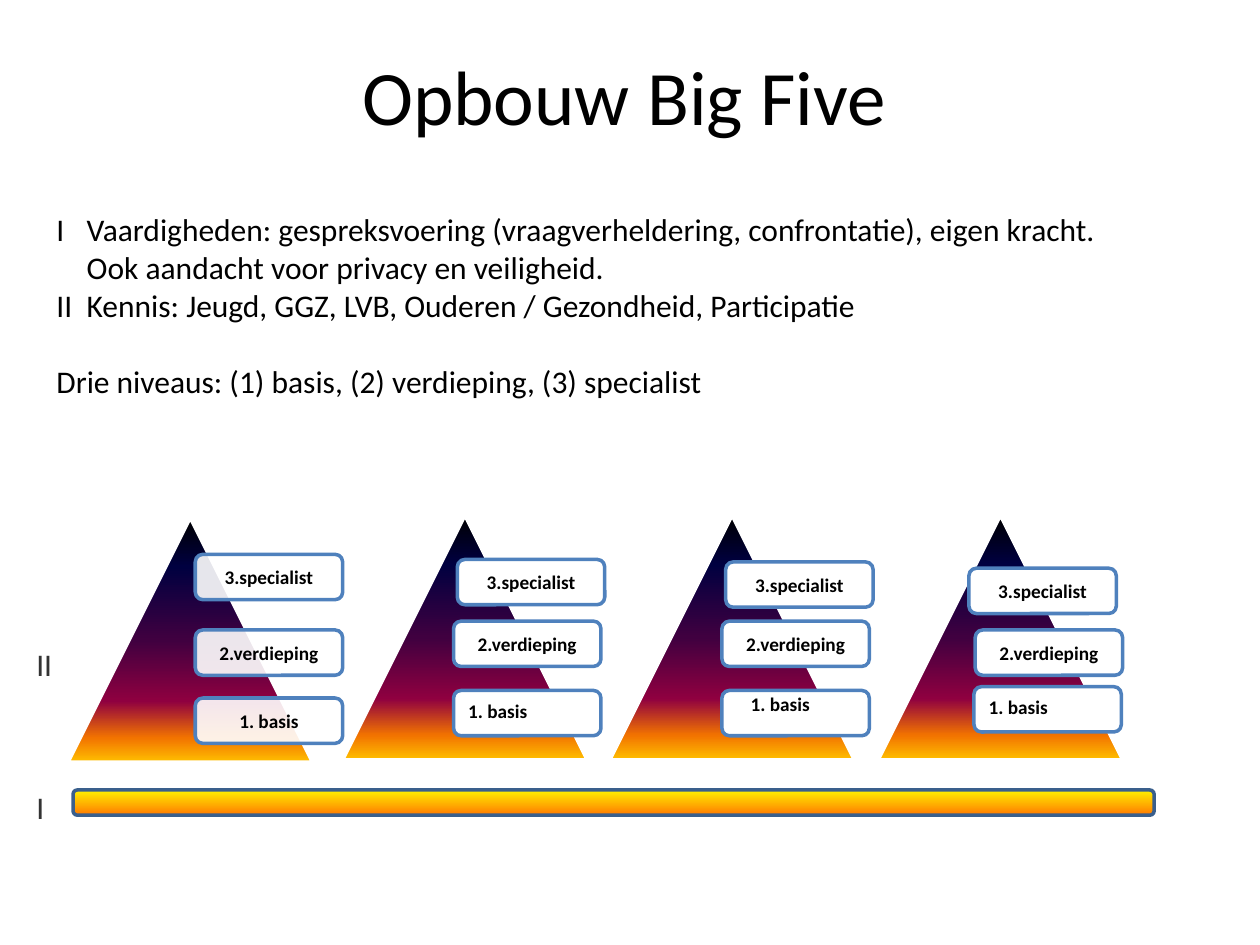
from lxml import etree
from pptx import Presentation
from pptx.dml.color import RGBColor
from pptx.enum import shapes, text
from pptx.oxml import ns
from pptx.util import Inches, Pt

FONT = "Calibri"
COLORS = {"ink": "000000", "level": "333333", "white": "FFFFFF",
          "card_line": "4F81BD", "bar_line": "3A5F8C"}
PYRAMID_STOPS = [(0, "000000"), (20, "000040"), (50, "400040"),
                 (75, "8F0040"), (90, "F27300"), (100, "FFBF00")]
BAR_STOPS = [(0, "FFF200"), (100, "FF7A00")]

# Pyramid left and top, then the left and top of its cards, top card first
PYRAMIDS = [
    (0.54, 4.11, [(1.55, 4.4), (1.55, 5), (1.55, 5.54)]),
    (2.72, 4.09, [(3.63, 4.44), (3.6, 4.93), (3.6, 5.48)]),
    (4.84, 4.09, [(5.76, 4.46), (5.73, 4.93), (5.73, 5.48)]),
    (6.97, 4.09, [(7.69, 4.51), (7.74, 5), (7.73, 5.45)]),
]
LEVELS = ["3.specialist", "2.verdieping", "1. basis"]
# Left and top inset of the basis label; None centres it
BASIS_INSETS = [None, (0.1, 0.05), (0.21, 0), (0.1, 0.05)]


def rgb(name):
    return RGBColor.from_string(COLORS[name])


def style(paragraph, size, color="ink", bold=False):
    font = paragraph.font
    font.name, font.size, font.bold = FONT, Pt(size), bold
    font.color.rgb = rgb(color)


def add_text(slide, box, lines, size, color="ink"):
    frame = slide.shapes.add_textbox(*map(Inches, box)).text_frame
    frame.word_wrap = True
    frame.text = "\n".join(lines)
    for paragraph in frame.paragraphs:
        style(paragraph, size, color)
    return frame


def add_outlined(slide, kind, box, line):
    shape = slide.shapes.add_shape(kind, *map(Inches, box))
    shape.shadow.inherit = False
    shape.line.color.rgb = rgb(line)
    shape.line.width = Pt(2)
    return shape


def fill_gradient(shape, stops):
    """Fill from top to bottom with (percent, colour) stops."""
    shape.fill.gradient()
    shape.fill.gradient_angle = 270
    stop_list = shape._element.spPr.find(".//" + ns.qn("a:gsLst"))
    for old in list(stop_list):
        stop_list.remove(old)
    for percent, color in stops:
        stop = etree.SubElement(stop_list, ns.qn("a:gs"), pos=str(percent * 1000))
        etree.SubElement(stop, ns.qn("a:srgbClr"), val=color)


def add_card(slide, left, top, label, inset=None, translucent=False):
    card = add_outlined(slide, shapes.MSO_SHAPE.ROUNDED_RECTANGLE,
                        (left, top, 1.17, 0.36), "card_line")
    card.fill.solid()
    card.fill.fore_color.rgb = rgb("white")
    if translucent:
        color = card._element.spPr.find(ns.qn("a:solidFill"))[0]
        etree.SubElement(color, ns.qn("a:alpha"), val="90000")
    frame = card.text_frame
    frame.text = label
    paragraph = frame.paragraphs[0]
    style(paragraph, 11, bold=True)
    frame.margin_left = frame.margin_right = Inches(0.05)
    frame.margin_top = frame.margin_bottom = 0
    if inset:
        frame.margin_left, frame.margin_top = map(Inches, inset)
        frame.vertical_anchor = text.MSO_ANCHOR.TOP
        paragraph.alignment = text.PP_ALIGN.LEFT
    else:
        frame.vertical_anchor = text.MSO_ANCHOR.MIDDLE
        paragraph.alignment = text.PP_ALIGN.CENTER


def add_pyramid(slide, left, top):
    pyramid = add_outlined(slide, shapes.MSO_SHAPE.ISOSCELES_TRIANGLE,
                           (left, top, 1.94, 1.94), "white")
    fill_gradient(pyramid, PYRAMID_STOPS)


def add_explanation(slide):
    frame = add_text(slide, (0.35, 1.62, 9.37, 1.62), [
        "I\tVaardigheden: gespreksvoering (vraagverheldering, confrontatie), "
        "eigen kracht.\vOok aandacht voor privacy en veiligheid.",
        "II\tKennis: Jeugd, GGZ, LVB, Ouderen / Gezondheid, Participatie",
        "Drie niveaus: (1) basis, (2) verdieping, (3) specialist",
    ], 18)
    *numbered, levels = frame.paragraphs
    for paragraph in numbered:
        props = paragraph._p.get_or_add_pPr()
        props.set("marL", str(Inches(0.24)))
        props.set("indent", str(-Inches(0.24)))
    levels.space_before = Pt(22)


def main():
    deck = Presentation()
    deck.slide_width, deck.slide_height = Inches(10), Inches(7.5)
    slide = deck.slides.add_slide(deck.slide_layouts[6])

    # Title and explanation
    title = add_text(slide, (0.74, 0.13, 8.43, 1.25), ["Opbouw Big Five"], 44)
    title.vertical_anchor = text.MSO_ANCHOR.MIDDLE
    title.paragraphs[0].alignment = text.PP_ALIGN.CENTER
    add_explanation(slide)

    # Layer numbers beside the pyramids and the bar
    layers = add_text(slide, (0.19, 5.01, 0.39, 1.65), ["II", "I"], 18, "level")
    for paragraph, gap in zip(layers.paragraphs, (4, 56)):
        paragraph.line_spacing = 1.2
        paragraph.space_before = Pt(gap)

    # Skills bar
    bar = add_outlined(slide, shapes.MSO_SHAPE.ROUNDED_RECTANGLE,
                       (0.58, 6.27, 8.58, 0.2), "bar_line")
    fill_gradient(bar, BAR_STOPS)

    # Knowledge pyramids with their three levels
    for number, (left, top, cards) in enumerate(PYRAMIDS):
        add_pyramid(slide, left, top)
        insets = (None, None, BASIS_INSETS[number])
        for (x, y), label, inset in zip(cards, LEVELS, insets):
            add_card(slide, x, y, label, inset, translucent=number == 0)

    deck.save("out.pptx")


if __name__ == "__main__":
    main()
